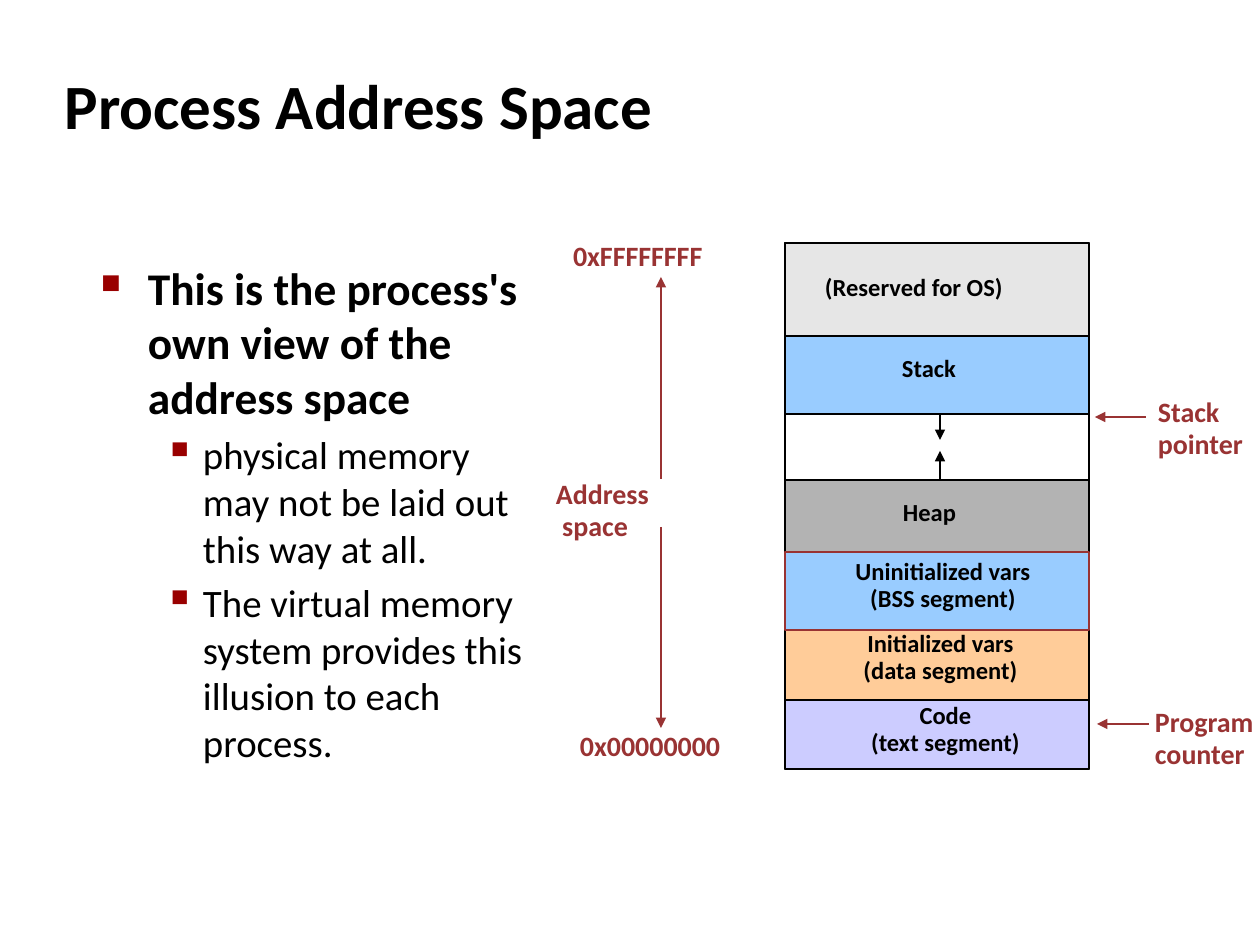
import pptx
import pptx.util
import pptx.dml.color
import pptx.enum.shapes
import pptx.enum.text
import pptx.oxml
import pptx.oxml.ns

EMU_PER_PX = 914400 / 126
FONT = "Calibri"
COLORS = {
    "black": "000000", "maroon": "993333", "bullet": "990000",
    "reserved": "E6E6E6", "blue": "99CCFF", "heap": "B3B3B3",
    "data": "FFCC99", "code": "CCCCFF",
}
MEMORY_LEFT, MEMORY_WIDTH = 785, 304
MEMORY_TOP, MEMORY_BOTTOM = 243, 769
ARROW_X = 661
GROWTH_X = 940

# top, bottom, fill, outline
SEGMENTS = [
    (MEMORY_TOP, 336, "reserved", "black"),
    (336, 414, "blue", "black"),
    (480, 552, "heap", "black"),
    (630, 700, "data", "black"),
    (700, MEMORY_BOTTOM, "code", "black"),
    (552, 630, "blue", "maroon"),
]
# left, top, width, height, lines, centred
SEGMENT_LABELS = [
    (825, 275, 239, 33, ["(Reserved for OS)"], False),
    (902, 356, 74, 33, ["Stack"], False),
    (903, 500, 73, 33, ["Heap"], False),
    (822, 559, 242, 67, ["Uninitialized vars", "(BSS segment)"], True),
    (838, 631, 205, 67, ["Initialized vars", "(data segment)"], True),
    (846, 703, 199, 67, ["Code", "(text segment)"], True),
]
# left, top, width, height, lines
ADDRESS_LABELS = [
    (573, 242, 181, 33, ["0xFFFFFFFF"]),
    (556, 480, 203, 66, ["Address", " space"]),
    (580, 731, 171, 33, ["0x00000000"]),
    (1158, 398, 100, 66, ["Stack", "pointer"]),
    (1155, 708, 104, 66, ["Program", "counter"]),
]
# start x, start y, end x, end y, colour
ARROWS = [
    (GROWTH_X, 414, GROWTH_X, 440, "black"),
    (GROWTH_X, 480, GROWTH_X, 451, "black"),
    (ARROW_X, 479, ARROW_X, 277, "maroon"),
    (ARROW_X, 527, ARROW_X, 728, "maroon"),
    (1146, 417, 1095, 417, "maroon"),
    (1149, 724, 1097, 724, "maroon"),
]
# text, size, bold, margin, hanging, bullet, bullet percent
POINTS = [
    ("This is the process's own view of the address space",
     25.9, True, 47, 47, "■", 60),
    ("physical memory may not be laid out this way at all.",
     22.2, False, 102, 39, "▪", 110),
    ("The virtual memory system provides this illusion to each process.",
     22.2, False, 102, 39, "▪", 110),
]


def px(n):
    return pptx.util.Emu(round(n * EMU_PER_PX))


def rgb(name):
    return pptx.dml.color.RGBColor.from_string(COLORS[name])


def set_font(p, size, color, bold):
    p.font.name = FONT
    p.font.size = pptx.util.Pt(size)
    p.font.bold = bold
    p.font.color.rgb = rgb(color)


def add_xml(parent, xml):
    tag, rest = xml.split(" ", 1) if " " in xml else (xml, "")
    parent.append(pptx.oxml.parse_xml(
        f"<a:{tag} {pptx.oxml.ns.nsdecls('a')} {rest}/>"))


def add_title(slide, text):
    sp = slide.shapes.title
    sp.left, sp.top, sp.width, sp.height = px(52), px(52), px(1046), px(105)
    tf = sp.text_frame
    tf.text = text
    tf.vertical_anchor = pptx.enum.text.MSO_ANCHOR.MIDDLE
    p = tf.paragraphs[0]
    p.alignment = pptx.enum.text.PP_ALIGN.LEFT
    set_font(p, 36, "black", True)


def add_text_frame(slide, left, top, width, height):
    """Add a wrapping text box without insets and return its text frame."""
    sp = slide.shapes.add_textbox(px(left), px(top), px(width), px(height))
    tf = sp.text_frame
    tf.word_wrap = True
    tf.margin_left = tf.margin_right = tf.margin_top = tf.margin_bottom = 0
    return tf


def add_paragraph(tf, index, text):
    p = tf.add_paragraph() if index else tf.paragraphs[0]
    p.text = text
    return p


def add_points(slide):
    tf = add_text_frame(slide, 101, 260, 432, 496)
    for i, (text, size, bold, margin, hanging, char, percent) in enumerate(POINTS):
        p = add_paragraph(tf, i, text)
        set_font(p, size, "black", bold)
        if i:
            p.space_before = pptx.util.Pt(size * 0.2)
        pPr = p._p.get_or_add_pPr()
        pPr.set("marL", str(px(margin)))
        pPr.set("indent", str(-px(hanging)))
        bullet = pptx.oxml.parse_xml(
            f"<a:pPr {pptx.oxml.ns.nsdecls('a')}>"
            f'<a:buClr><a:srgbClr val="{COLORS["bullet"]}"/></a:buClr>'
            f'<a:buSzPct val="{percent * 1000}"/>'
            f'<a:buChar char="{char}"/></a:pPr>')
        defaults = pPr.find(pptx.oxml.ns.qn("a:defRPr"))
        for child in list(bullet):
            defaults.addprevious(child)


def add_label(slide, left, top, width, height, lines, size, color, centred=False):
    tf = add_text_frame(slide, left, top, width, height)
    for i, text in enumerate(lines):
        p = add_paragraph(tf, i, text)
        set_font(p, size, color, True)
        p.line_spacing = 0.9 if centred and i else 0.93
        if centred:
            p.alignment = pptx.enum.text.PP_ALIGN.CENTER


def add_box(slide, top, bottom, fill, line):
    """Add one full-width memory block; without a fill it is an open frame."""
    sp = slide.shapes.add_shape(
        pptx.enum.shapes.MSO_SHAPE.RECTANGLE,
        px(MEMORY_LEFT), px(top), px(MEMORY_WIDTH), px(bottom - top))
    sp.shadow.inherit = False
    if fill:
        sp.fill.solid()
        sp.fill.fore_color.rgb = rgb(fill)
    else:
        sp.fill.background()
    sp.line.color.rgb = rgb(line)
    sp.line.width = pptx.util.Pt(0.75)


def add_arrow(slide, x1, y1, x2, y2, color):
    line = slide.shapes.add_connector(
        pptx.enum.shapes.MSO_CONNECTOR.STRAIGHT, px(x1), px(y1), px(x2), px(y2))
    line.line.color.rgb = rgb(color)
    line.line.width = pptx.util.Pt(0.75)
    add_xml(line.line._get_or_add_ln(), 'tailEnd type="triangle"')
    add_xml(line._element.spPr, "effectLst")


def main():
    prs = pptx.Presentation()
    prs.slide_width, prs.slide_height = px(1260), px(945)
    slide = prs.slides.add_slide(prs.slide_layouts[5])
    add_title(slide, "Process Address Space")
    add_points(slide)
    add_box(slide, MEMORY_TOP, MEMORY_BOTTOM, None, "black")
    for segment in SEGMENTS:
        add_box(slide, *segment)
    for arrow in ARROWS:
        add_arrow(slide, *arrow)
    for *place, lines, centred in SEGMENT_LABELS:
        add_label(slide, *place, lines, 14, "black", centred)
    for *place, lines in ADDRESS_LABELS:
        add_label(slide, *place, lines, 16, "maroon")
    prs.save("out.pptx")


if __name__ == "__main__":
    main()
